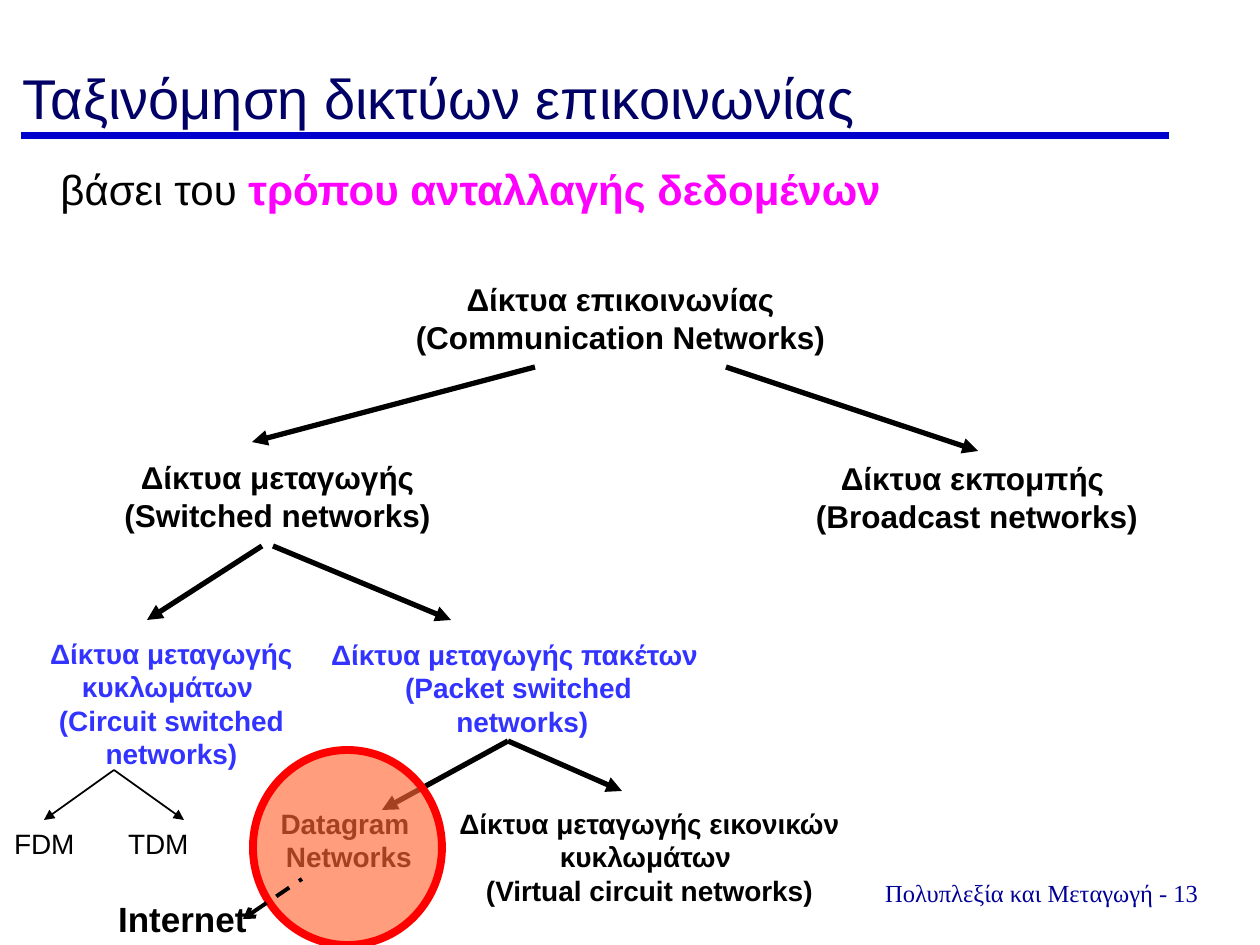
"""Build the slide that classifies communication networks as a tree."""
from dataclasses import dataclass

from pptx import Presentation
from pptx import util as u
from pptx.dml.color import RGBColor
from pptx.enum import dml, shapes, text
from pptx.oxml.ns import qn
from lxml import etree

EMU_PER_PX = 914400 / 126
CENTER, LEFT, RIGHT = text.PP_ALIGN.CENTER, text.PP_ALIGN.LEFT, text.PP_ALIGN.RIGHT


def px(length):
    return u.Emu(round(length * EMU_PER_PX))


@dataclass(frozen=True)
class Theme:
    sans: str = "Arial"
    serif: str = "Times New Roman"
    title: str = "000066"
    rule: str = "0000CC"
    footer: str = "000099"
    ink: str = "000000"
    accent: str = "FF00FF"
    branch: str = "3333FF"
    ring: str = "FF0000"
    highlight: str = "FF6633"
    title_size: int = 32
    lead_size: int = 24
    example_size: int = 20
    node_size: int = 18
    leaf_size: int = 16
    footer_size: int = 14


class SlideBuilder:
    def __init__(self, slide, theme):
        self.slide = slide
        self.theme = theme

    def run(self, paragraph, words, size, color, bold=False, font=None):
        run = paragraph.add_run()
        run.text = words
        run.font.name = font or self.theme.sans
        run.font.size = u.Pt(size)
        run.font.bold = bold
        run.font.color.rgb = RGBColor.from_string(color)

    def title(self, box, words):
        shape = self.slide.shapes.title
        shape.left, shape.top, shape.width, shape.height = map(px, box)
        frame = shape.text_frame
        frame.auto_size = text.MSO_AUTO_SIZE.NONE
        frame.vertical_anchor = text.MSO_ANCHOR.BOTTOM
        paragraph = frame.paragraphs[0]
        paragraph.alignment = LEFT
        self.run(paragraph, words, self.theme.title_size, self.theme.title)

    def textbox(self, box, align=CENTER, wrap=True):
        frame = self.slide.shapes.add_textbox(*map(px, box)).text_frame
        frame.word_wrap = wrap
        if not wrap:
            frame.auto_size = text.MSO_AUTO_SIZE.SHAPE_TO_FIT_TEXT
        frame.paragraphs[0].alignment = align
        return frame

    def label(self, box, paragraphs, size, color=None, bold=True, align=CENTER, wrap=True, font=None):
        frame = self.textbox(box, align, wrap)
        for index, words in enumerate(paragraphs):
            paragraph = frame.add_paragraph() if index else frame.paragraphs[0]
            paragraph.alignment = align
            for number, line in enumerate(words.split("\n")):
                if number:
                    paragraph.add_line_break()
                self.run(paragraph, line, size, color or self.theme.ink, bold, font)

    def lead(self, box, plain, emphasis):
        paragraph = self.textbox(box, LEFT).paragraphs[0]
        self.run(paragraph, plain, self.theme.lead_size, self.theme.ink)
        self.run(paragraph, emphasis, self.theme.lead_size, self.theme.accent, True)

    def line(self, start, end, width=3, color=None, dash=None, head=None, tail=None):
        connector = self.slide.shapes.add_connector(
            shapes.MSO_CONNECTOR.STRAIGHT, *map(px, start + end))
        connector.line.color.rgb = RGBColor.from_string(color or self.theme.ink)
        connector.line.width = u.Pt(width)
        if dash:
            connector.line.dash_style = dash
        outline = connector.line._get_or_add_ln()
        for tag, kind in (("a:headEnd", head), ("a:tailEnd", tail)):
            if kind:
                etree.SubElement(outline, qn(tag), type=kind)
        etree.SubElement(connector._element.spPr, qn("a:effectLst"))

    def branches(self, start, ends, width=3):
        for end in ends:
            self.line(start, end, width, tail="triangle")

    def highlight(self, box, opacity):
        shape = self.slide.shapes.add_shape(shapes.MSO_SHAPE.OVAL, *map(px, box))
        shape.shadow.inherit = False
        shape.fill.solid()
        shape.fill.fore_color.rgb = RGBColor.from_string(self.theme.highlight)
        color = shape._element.spPr.find(qn("a:solidFill"))[0]
        etree.SubElement(color, qn("a:alpha"), val=str(opacity * 1000))
        shape.line.color.rgb = RGBColor.from_string(self.theme.ring)
        shape.line.width = u.Pt(4.5)


def main():
    presentation = Presentation()
    presentation.slide_width, presentation.slide_height = px(1260), px(945)
    theme = Theme()
    builder = SlideBuilder(presentation.slides.add_slide(presentation.slide_layouts[5]), theme)

    builder.line((21, 136), (1169, 136), 4, theme.rule)
    builder.label((861, 872, 368, 42), ["Πολυπλεξία και Μεταγωγή - 13 "],
                  theme.footer_size, theme.footer, False, font=theme.serif)
    builder.title((10, 31, 1218, 106), "Ταξινόμηση δικτύων επικοινωνίας")
    builder.lead((48, 157, 1181, 640), "βάσει του ", "τρόπου ανταλλαγής δεδομένων")

    for box, paragraphs in (
        ((402, 274, 437, 88), ["Δίκτυα επικοινωνίας (Communication Networks)"]),
        ((74, 452, 407, 88), ["Δίκτυα μεταγωγής (Switched networks)"]),
        ((759, 453, 436, 88), ["Δίκτυα εκπομπής ", "(Broadcast networks)"]),
    ):
        builder.label(box, paragraphs, theme.node_size)

    for box, paragraphs, color in (
        ((0, 630, 343, 147), ["Δίκτυα μεταγωγής κυκλωμάτων ", "(Circuit switched\nnetworks)"], theme.branch),
        ((312, 631, 413, 113), ["Δίκτυα μεταγωγής πακέτων ", "(Packet switched\n networks)"], theme.branch),
        ((203, 800, 284, 81), ["Datagram\n Networks"], theme.ink),
        ((441, 800, 417, 113), ["Δίκτυα μεταγωγής εικονικών κυκλωμάτων ", "(Virtual circuit networks)"], theme.ink),
    ):
        builder.label(box, paragraphs, theme.leaf_size, color)

    builder.branches((535, 367), [(252, 442)])
    builder.branches((726, 367), [(978, 451)])
    builder.branches((262, 546), [(147, 620)])
    builder.branches((273, 546), [(451, 620)])
    builder.branches((508, 741), [(382, 810), (622, 791)])
    builder.branches((114, 770), [(44, 820), (184, 820)], 1)

    builder.highlight((253, 750, 189, 195), 64)
    builder.line((243, 919), (302, 879), 2.25, dash=dml.MSO_LINE.DASH, head="arrow")
    builder.label((104, 891, 155, 54), ["Internet"], theme.example_size, align=RIGHT, wrap=False)
    for left, name in ((0, "FDM"), (114, "TDM")):
        builder.label((left, 820, 87, 47), [name], theme.leaf_size, bold=False, align=RIGHT, wrap=False)

    presentation.save("out.pptx")


if __name__ == "__main__":
    main()
